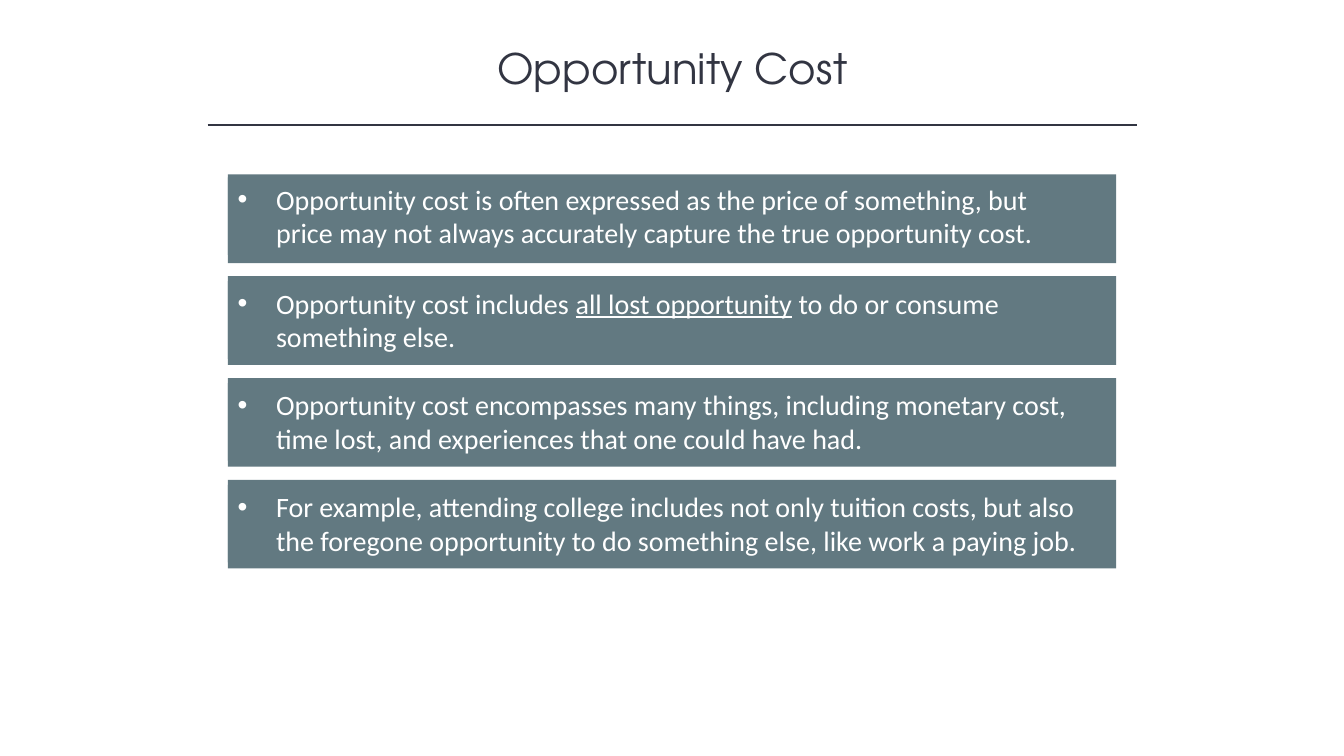
from lxml.etree import SubElement
from pptx import Presentation
from pptx.dml.color import RGBColor
from pptx.enum.shapes import MSO_CONNECTOR, MSO_SHAPE
from pptx.enum.text import MSO_ANCHOR, PP_ALIGN
from pptx.oxml.ns import qn
from pptx.util import Inches, Pt

INK = RGBColor(0x32, 0x35, 0x42)
SLATE = RGBColor(0x62, 0x79, 0x81)
WHITE = RGBColor(0xFF, 0xFF, 0xFF)

PANEL_LEFT = 2.26
FIRST_TOP = 1.73
PANEL_PITCH = 1.01
POINTS = [
    (0.03, ["Opportunity cost is often expressed as the price of something, but "
            "price may not always accurately capture the true opportunity cost."]),
    (0.05, ["Opportunity cost includes ", "all lost opportunity",
            " to do or consume something else."]),
    (0.05, ["Opportunity cost encompasses many things, including monetary cost, "
            "time lost, and experiences that one could have had."]),
    (0.05, ["For example, attending college includes not only tuition costs, but also "
            "the foregone opportunity to do something else, like work a paying job."]),
]


class SlideBuilder:
    """Draws the title, rule and bulleted panels in one shared style."""

    title_font = "TeX Gyre Adventor"
    body_font = "Calibri"

    def __init__(self, slide):
        self.slide = slide

    def style_run(self, run, font, size, color):
        run.font.name = font
        run.font.size = Pt(size)
        run.font.color.rgb = color

    def title(self, text, left, top, width, height):
        heading = self.slide.shapes.add_textbox(
            Inches(left), Inches(top), Inches(width), Inches(height))
        heading.text_frame.word_wrap = True
        paragraph = heading.text_frame.paragraphs[0]
        paragraph.text = text
        paragraph.alignment = PP_ALIGN.CENTER
        self.style_run(paragraph.runs[0], self.title_font, 30, INK)

    def rule(self, left, right, y):
        divider = self.slide.shapes.add_connector(
            MSO_CONNECTOR.STRAIGHT, Inches(left), Inches(y), Inches(right), Inches(y))
        divider.line.color.rgb = INK
        divider.line.width = Pt(1)
        SubElement(divider._element.spPr, qn("a:effectLst"))

    def block(self, group, left, top, width, height):
        block = group.shapes.add_shape(
            MSO_SHAPE.RECTANGLE, Inches(left), Inches(top), Inches(width), Inches(height))
        block.shadow.inherit = False
        block.fill.solid()
        block.fill.fore_color.rgb = SLATE
        block.line.fill.background()
        return block

    def bullet(self, paragraph):
        properties = paragraph._p.get_or_add_pPr()
        properties.set("marL", str(Inches(0.38)))
        properties.set("indent", str(-Inches(0.38)))
        SubElement(properties, qn("a:buFont"), typeface="Arial")
        SubElement(properties, qn("a:buChar"), char="•")

    def point(self, parts, left, top, text_offset):
        group = self.slide.shapes.add_group_shape()
        self.block(group, left, top, 8.81, 0.88)
        statement = self.block(group, left, top + text_offset, 8.54, 0.77)
        frame = statement.text_frame
        frame.word_wrap = True
        frame.vertical_anchor = MSO_ANCHOR.TOP
        paragraph = frame.paragraphs[0]
        paragraph.alignment = PP_ALIGN.LEFT
        self.bullet(paragraph)
        for index, part in enumerate(parts):
            run = paragraph.add_run()
            run.text = part
            self.style_run(run, self.body_font, 20, WHITE)
            if index == 1:
                run.font.underline = True


def main():
    presentation = Presentation()
    presentation.slide_width = Inches(13.33)
    presentation.slide_height = Inches(7.5)
    builder = SlideBuilder(presentation.slides.add_slide(presentation.slide_layouts[6]))
    builder.title("Opportunity Cost", 1.67, 0.37, 10, 0.61)
    builder.rule(2.06, 11.28, 1.24)
    for row, (text_offset, parts) in enumerate(POINTS):
        builder.point(parts, PANEL_LEFT, FIRST_TOP + row * PANEL_PITCH, text_offset)
    presentation.save("out.pptx")


if __name__ == "__main__":
    main()
